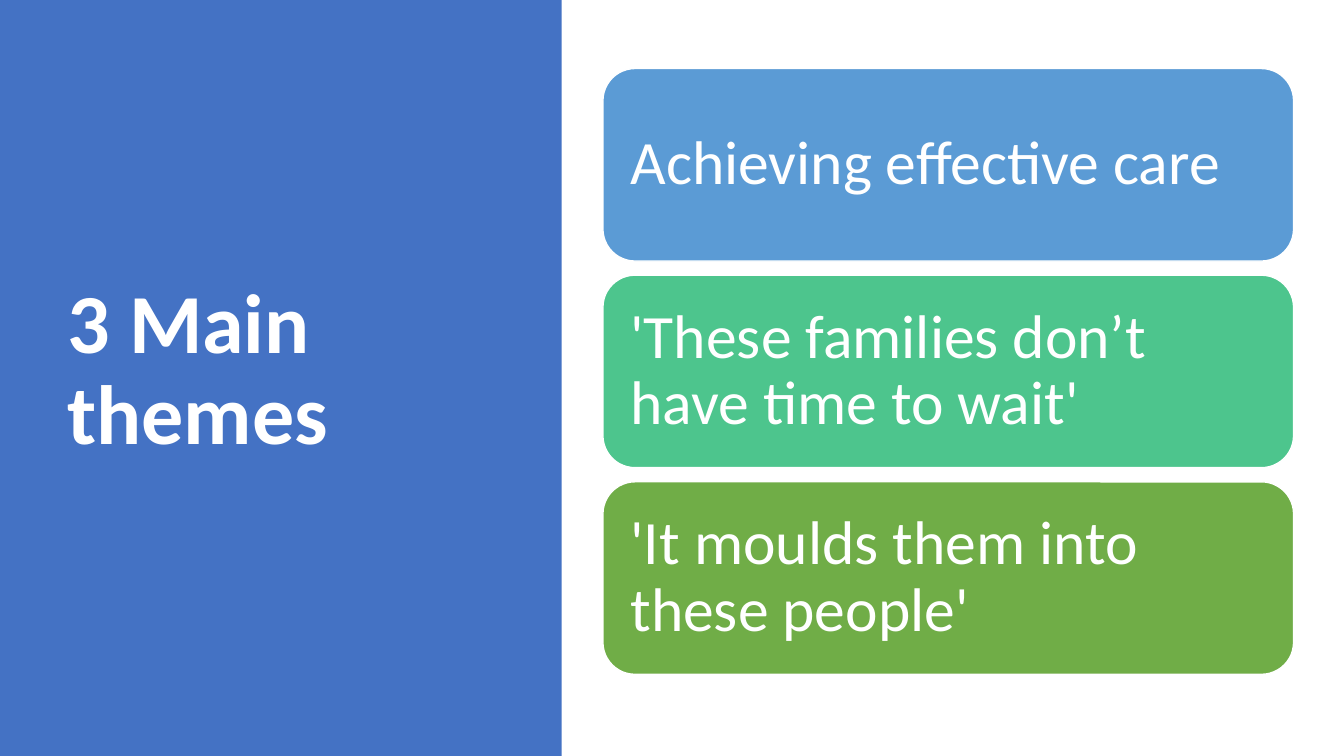
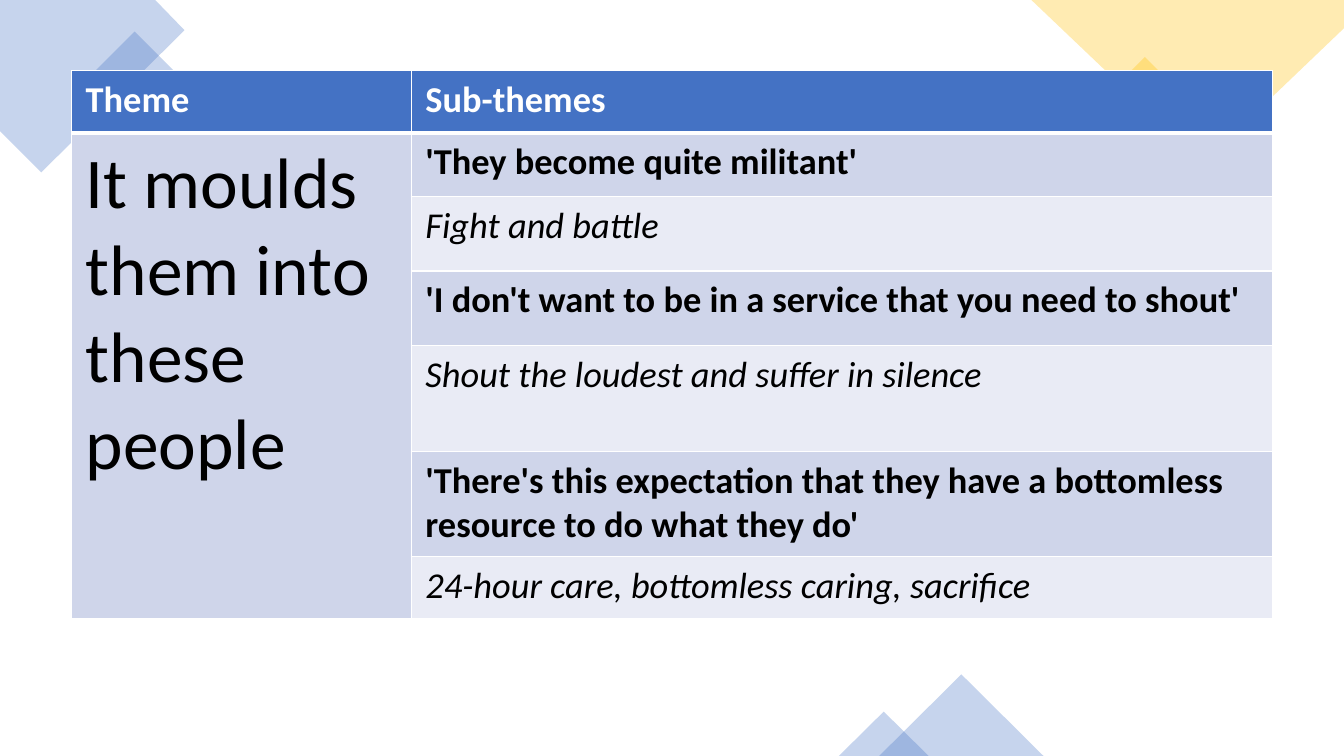
"""Build two slides: the three main themes, and the sub-themes of one of them."""
from dataclasses import dataclass

from lxml.etree import SubElement
from pptx import Presentation
from pptx.dml.color import RGBColor
from pptx.enum.shapes import MSO_SHAPE
from pptx.enum.text import MSO_ANCHOR, PP_ALIGN
from pptx.oxml.ns import qn
from pptx.util import Inches, Pt


@dataclass(frozen=True)
class Theme:
    font: str = "Calibri"
    blue: str = "4472C4"
    gold: str = "FFC000"
    white: str = "FFFFFF"
    black: str = "000000"
    bands: tuple = ("CFD5EA", "E9EBF5")
    cards: tuple = ("5B9BD5", "4DC58D", "70AD47")
    title_size: int = 60
    card_size: int = 44
    theme_size: int = 51
    cell_size: int = 26
    decor_alpha: int = 30


T = Theme()
WIDTH, HEIGHT = 13.33, 7.5
TITLE_ONLY, BLANK = 5, 6

TITLE = "3 Main themes"
THEMES = [
    "Achieving effective care",
    "'These families don’t have time to wait'",
    "'It moulds them into these people'",
]
HEADERS = ("Theme", "Sub-themes")
THEME_NAME = "It moulds them into these people"
SUB_THEMES = [
    ("'They become quite militant'", "Fight and battle"),
    ("'I don't want to be in a service that you need to shout'",
     "Shout the loudest and suffer in silence"),
    ("'There's this expectation that they have a bottomless resource to do what they do'",
     "24-hour care, bottomless caring, sacrifice"),
]
COLUMN_WIDTHS = (3.37, 8.54)
ROW_HEIGHTS = (0.62, 0.63, 0.74, 0.74, 1.05, 1.04, 0.62)

CORNERS = [
    (T.blue, [(0, 0), (1.54, 0), (1.83, 0.3), (0.41, 1.71), (0, 1.3)]),
    (T.gold, [(10.23, 0), (WIDTH, 0), (WIDTH, 0.28), (11.93, 1.62)]),
]
DECOR = [
    (MSO_SHAPE.RECTANGLE, T.blue, (0.98, 0.46, 0.71, 0.71), 45),
    (MSO_SHAPE.RECTANGLE, T.gold, (10.98, 0.72, 0.75, 0.75), 45),
    (MSO_SHAPE.ISOSCELES_TRIANGLE, T.blue, (8.72, 6.69, 1.63, 0.81), 0),
    (MSO_SHAPE.ISOSCELES_TRIANGLE, T.blue, (8.32, 7.06, 0.89, 0.44), 0),
]


def paint(sp, color, alpha=None):
    """Give a shape a flat fill without line or shadow."""
    sp.shadow.inherit = False
    sp.fill.solid()
    sp.fill.fore_color.rgb = RGBColor.from_string(color)
    sp.line.fill.background()
    if alpha is not None:
        for clr in sp.element.xpath("./p:spPr/a:solidFill/a:srgbClr"):
            SubElement(clr, qn("a:alpha"), val=str(alpha * 1000))


def add_block(s, kind, box, color, alpha=None):
    """Add a preset shape placed in inches."""
    sp = s.shapes.add_shape(kind, *map(Inches, box))
    paint(sp, color, alpha)
    return sp


def write(tf, text, size, color, bold=False, italic=False, spacing=None):
    """Write one left-aligned run into a text frame."""
    tf.word_wrap = True
    p = tf.paragraphs[0]
    p.alignment = PP_ALIGN.LEFT
    if spacing:
        p.line_spacing = spacing
    r = p.add_run()
    r.text = text
    r.font.name, r.font.size = T.font, Pt(size)
    r.font.bold, r.font.italic = bold, italic
    r.font.color.rgb = RGBColor.from_string(color)


def style_cell(cell, fill, top=1, bottom=1):
    """Set margins, white borders and fill of a table cell."""
    cell.margin_left = cell.margin_right = Inches(0.14)
    cell.margin_top = cell.margin_bottom = Inches(0.07)
    tc_pr = cell._tc.get_or_add_tcPr()
    for edge, width in (("L", 1), ("R", 1), ("T", top), ("B", bottom)):
        ln = SubElement(tc_pr, qn(f"a:ln{edge}"), w=str(Pt(width)))
        SubElement(SubElement(ln, qn("a:solidFill")), qn("a:srgbClr"), val=T.white)
    cell.fill.solid()
    cell.fill.fore_color.rgb = RGBColor.from_string(fill)


def build_themes(prs):
    """Slide with a title panel and one card per theme."""
    s = prs.slides.add_slide(prs.slide_layouts[TITLE_ONLY])
    panel = add_block(s, MSO_SHAPE.RECTANGLE, (0, 0, 5.57, HEIGHT), T.blue)
    title = s.shapes.title
    title.element.addprevious(panel.element)
    title.left, title.top, title.width, title.height = map(Inches, (0.57, 0.68, 4.16, 6.02))
    title.text_frame.vertical_anchor = MSO_ANCHOR.MIDDLE
    write(title.text_frame, TITLE, T.title_size, T.white, bold=True, spacing=0.9)

    top, height, gap = 0.68, 1.91, 0.14
    for i, (text, color) in enumerate(zip(THEMES, T.cards)):
        box = (5.98, top + i * (height + gap), 6.85, height)
        card = add_block(s, MSO_SHAPE.ROUNDED_RECTANGLE, box, color)
        card.line.color.rgb = RGBColor.from_string(T.white)
        card.line.width = Pt(1)
        tf = card.text_frame
        tf.vertical_anchor = MSO_ANCHOR.MIDDLE
        tf.margin_left = tf.margin_right = tf.margin_top = tf.margin_bottom = Inches(0.18)
        write(tf, text, T.card_size, T.white, spacing=0.9)


def build_sub_themes(prs):
    """Slide with corner decoration and the table of sub-themes."""
    s = prs.slides.add_slide(prs.slide_layouts[BLANK])
    for color, points in CORNERS:
        start, *rest = [(Inches(x), Inches(y)) for x, y in points]
        outline = s.shapes.build_freeform(*start)
        outline.add_line_segments(rest, close=True)
        paint(outline.convert_to_shape(), color, T.decor_alpha)
    for kind, color, box, angle in DECOR:
        add_block(s, kind, box, color, T.decor_alpha).rotation = angle

    size = (sum(COLUMN_WIDTHS), sum(ROW_HEIGHTS))
    table = s.shapes.add_table(len(ROW_HEIGHTS), len(COLUMN_WIDTHS),
                               *map(Inches, (0.71, 0.7, *size))).table
    for column, width in zip(table.columns, COLUMN_WIDTHS):
        column.width = Inches(width)
    for row, height in zip(table.rows, ROW_HEIGHTS):
        row.height = Inches(height)

    for col, text in enumerate(HEADERS):
        cell = table.cell(0, col)
        style_cell(cell, T.blue, bottom=3)
        write(cell.text_frame, text, T.cell_size, T.white, bold=True)

    lines = [line for pair in SUB_THEMES for line in pair]
    for row, text in enumerate(lines, 1):
        is_detail = row % 2 == 0
        top = 3 if row == 1 else 1
        style_cell(table.cell(row, 0), T.bands[0], top)
        cell = table.cell(row, 1)
        style_cell(cell, T.bands[is_detail], top)
        write(cell.text_frame, text, T.cell_size, T.black, bold=not is_detail, italic=is_detail)
    theme_cell = table.cell(1, 0)
    theme_cell.merge(table.cell(len(lines), 0))
    write(theme_cell.text_frame, THEME_NAME, T.theme_size, T.black)


def main():
    """Build and save the presentation."""
    prs = Presentation()
    prs.slide_width, prs.slide_height = Inches(WIDTH), Inches(HEIGHT)
    build_themes(prs)
    build_sub_themes(prs)
    prs.save("out.pptx")


if __name__ == "__main__":
    main()
